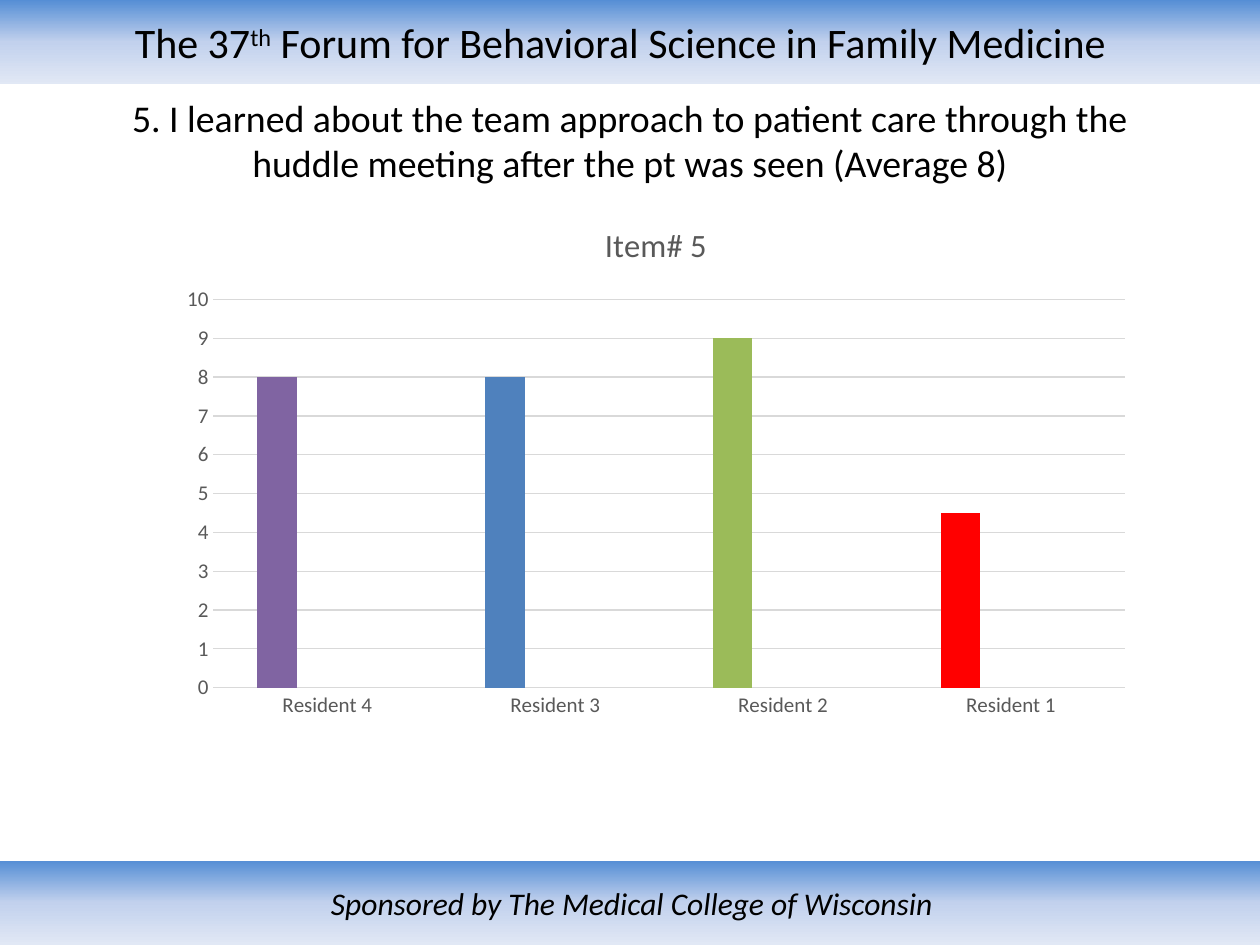
from copy import deepcopy

from pptx import Presentation
from pptx import util as u
from pptx.chart.data import CategoryChartData
from pptx.dml.color import RGBColor
from pptx.enum import chart as ch, shapes, text
from pptx.oxml.ns import qn

FONT = "Calibri"
BAND_STOPS = [(0, "558ED5"), (0.5, "C2D1ED"), (1, "E1E8F5")]
GREY, GRID = "595959", "D9D9D9"


def rgb(value):
    return RGBColor.from_string(value)


def format_font(font, color="000000", **values):
    for name, value in {"name": FONT, **values}.items():
        setattr(font, name, value)
    font.color.rgb = rgb(color)


def write_runs(tf, runs, anchor, **values):
    """Fill a frame with one centred paragraph of (wording, baseline) runs."""
    tf.word_wrap = True
    tf.vertical_anchor = anchor
    p = tf.paragraphs[0]
    p.alignment = text.PP_ALIGN.CENTER
    for wording, baseline in runs:
        r = p.add_run()
        r.text = wording
        format_font(r.font, **values)
        if baseline:
            r.font._element.set("baseline", str(baseline * 1000))


def add_band(s, top, width, runs, **values):
    sp = s.shapes.add_shape(shapes.MSO_SHAPE.RECTANGLE, 0, u.Cm(top), u.Cm(width), u.Cm(1.7))
    sp.shadow.inherit = False
    sp.line.fill.background()
    sp.fill.gradient()
    sp.fill.gradient_angle = 270
    # A new gradient has two stops; the band needs a third
    stops = sp._element.spPr.find(".//" + qn("a:gsLst"))
    stops.append(deepcopy(stops[0]))
    for stop, (position, color) in zip(sp.fill.gradient_stops, BAND_STOPS):
        stop.position = position
        stop.color.rgb = rgb(color)
    write_runs(sp.text_frame, runs, text.MSO_ANCHOR.MIDDLE, **values)


def add_question(s, wording):
    sp = s.shapes.add_textbox(u.Cm(1.27), u.Cm(1.9), u.Cm(22.86), u.Cm(2.54))
    sp.text_frame.margin_top = 0
    write_runs(sp.text_frame, [(wording, 0)], text.MSO_ANCHOR.TOP, size=u.Pt(21.6))


def format_axis(axis):
    axis.major_tick_mark = axis.minor_tick_mark = ch.XL_TICK_MARK.NONE
    format_font(axis.tick_labels.font, GREY, size=u.Pt(12))


def format_line(line):
    line.color.rgb = rgb(GRID)
    line.width = u.Pt(0.75)


def add_score_chart(s):
    data = CategoryChartData()
    data.categories = [f"Resident {n}" for n in (4, 3, 2, 1)]
    data.add_series("Series 1", [8, 8, 9, 4.5])
    for n in (2, 3):
        data.add_series(f"Series {n}", [None] * 4)
    chart = s.shapes.add_chart(ch.XL_CHART_TYPE.COLUMN_CLUSTERED, u.Cm(3.38), u.Cm(4.01),
                               u.Cm(19.69), u.Cm(10.67), data).chart
    format_font(chart.font, size=u.Pt(10))
    chart.has_legend = False

    # Title
    chart.has_title = True
    chart.chart_title.include_in_layout = False
    p = chart.chart_title.text_frame.paragraphs[0]
    r = p.add_run()
    r.text = "Item# 5"
    format_font(r.font, GREY, size=u.Pt(18.6), bold=False)

    # Axes
    cat, val = chart.category_axis, chart.value_axis
    format_axis(cat)
    format_axis(val)
    format_line(cat.format.line)
    format_line(val.major_gridlines.format.line)
    val.format.line.fill.background()
    val.minimum_scale, val.maximum_scale, val.major_unit = 0, 10, 1

    # Columns, one colour for each resident
    plot = chart.plots[0]
    for name, value in {"vary_by_categories": False, "gap_width": 219, "overlap": -27}.items():
        setattr(plot, name, value)
    for series, color in zip(plot.series, ("4F81BD", "C0504D", "9BBB59")):
        series.format.fill.solid()
        series.format.fill.fore_color.rgb = rgb(color)
    for i, color in {0: "8064A2", 2: "9BBB59", 3: "FF0000"}.items():
        fill = plot.series[0].points[i].format.fill
        fill.solid()
        fill.fore_color.rgb = rgb(color)


def main():
    prs = Presentation()
    prs.slide_width, prs.slide_height = u.Cm(25.4), u.Cm(19.05)
    s = prs.slides.add_slide(prs.slide_layouts[6])

    # Header and footer bands
    add_band(s, 0, 25.4, [("The 37", 0), ("th", 30),
                          (" Forum for Behavioral Science in Family Medicine  ", 0)],
             size=u.Pt(24))
    add_band(s, 17.35, 25.48, [("Sponsored by The Medical College of Wisconsin", 0)],
             size=u.Pt(18), italic=True)

    # Question and its scores
    add_question(s, "5. I learned about the team approach to patient care through the "
                    "huddle meeting after the pt was seen (Average 8)")
    add_score_chart(s)
    prs.save("out.pptx")


if __name__ == "__main__":
    main()
